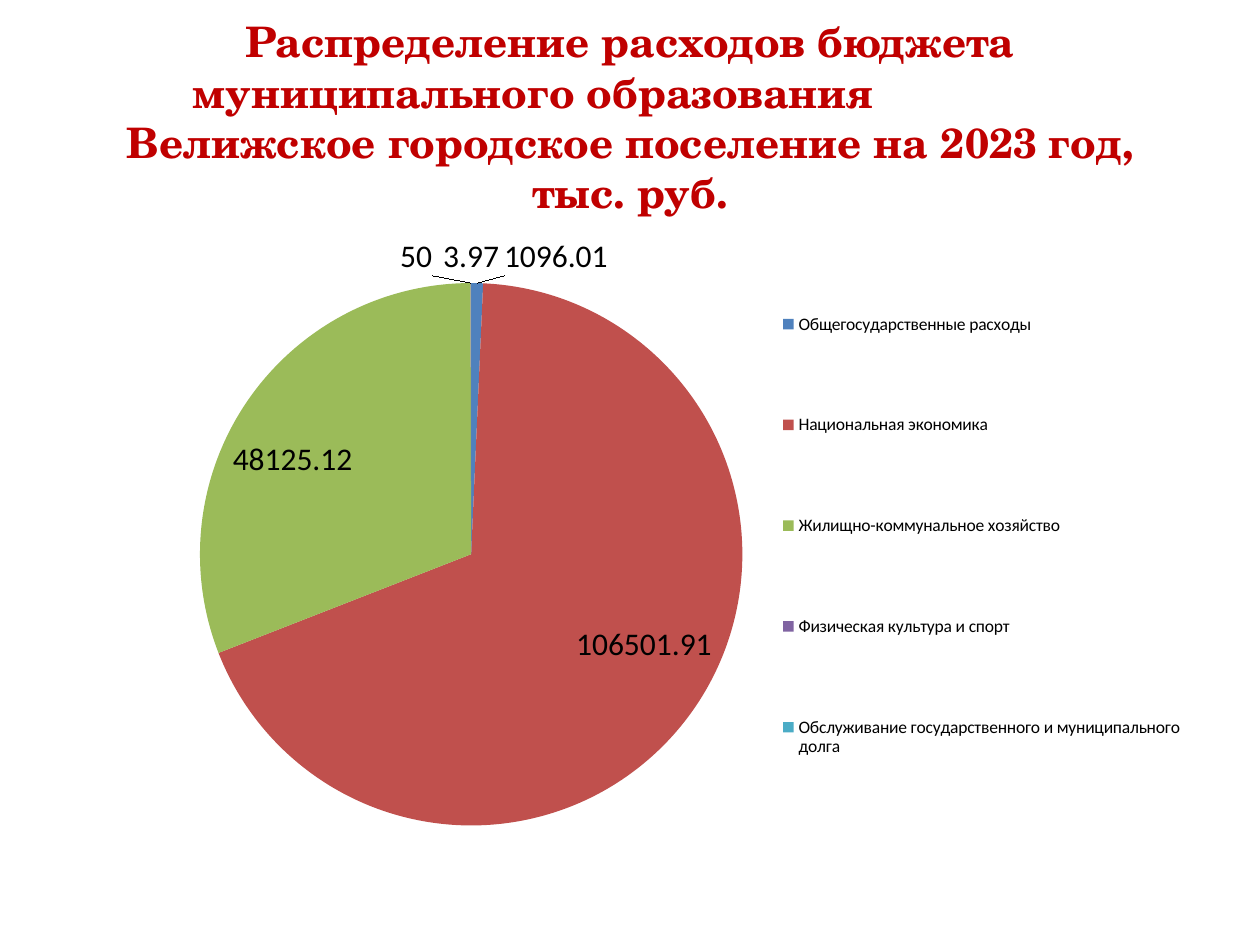
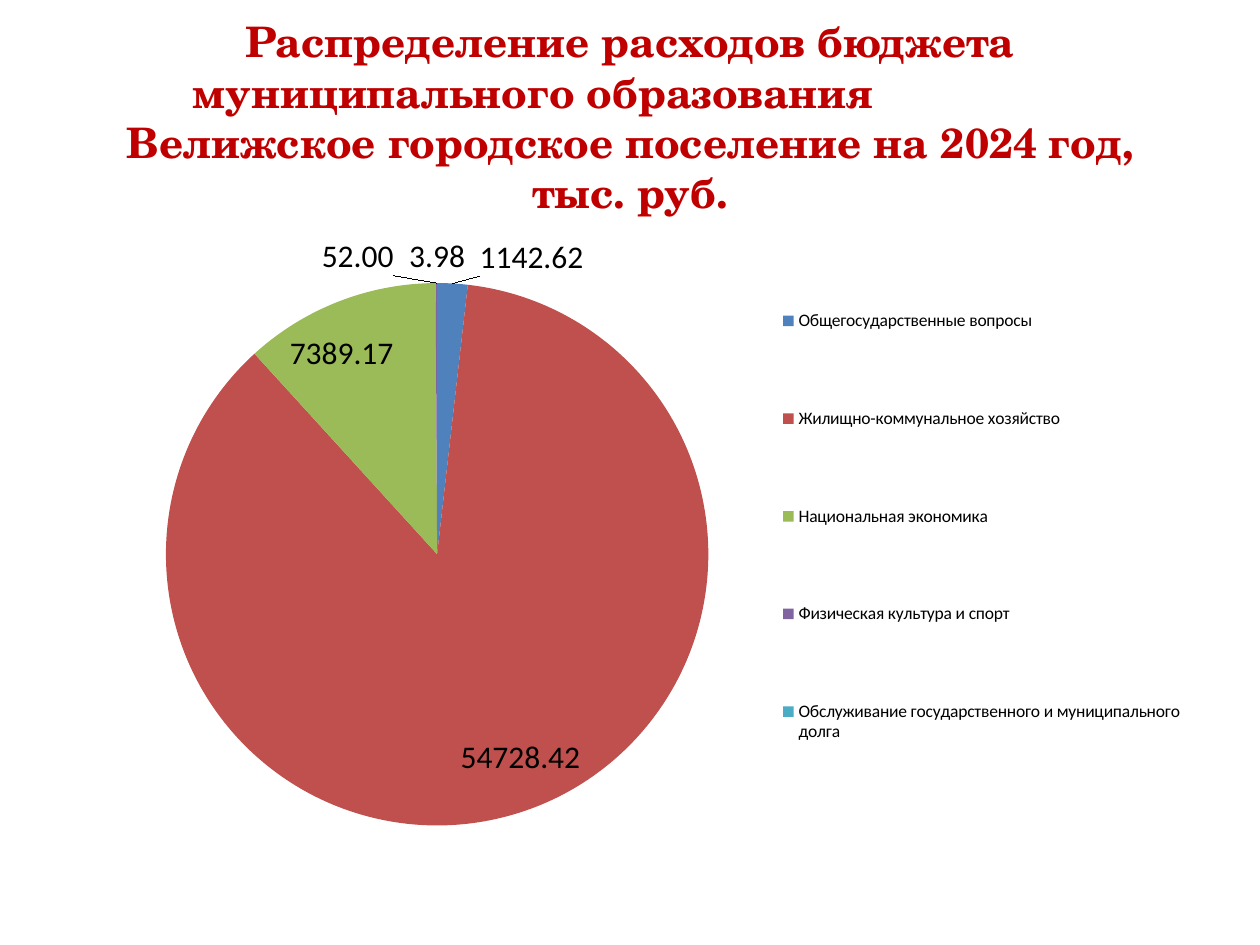
from dataclasses import dataclass

from lxml.etree import SubElement
from pptx import Presentation
from pptx.chart.data import CategoryChartData
from pptx.dml.color import RGBColor
from pptx.enum.chart import XL_CHART_TYPE, XL_LABEL_POSITION, XL_LEGEND_POSITION
from pptx.enum.text import MSO_ANCHOR, MSO_AUTO_SIZE, PP_ALIGN
from pptx.oxml import parse_xml
from pptx.oxml.ns import nsdecls, qn
from pptx.util import Cm, Pt

SPORT = "Физическая культура и спорт"
DEBT = "Обслуживание государственного и муниципального долга"
HOUSING = "Жилищно-коммунальное хозяйство"
ECONOMY = "Национальная экономика"

YEARS = [
    {
        "year": 2023,
        "costs": [
            ("Общегосударственные расходы", 1096.01),
            (ECONOMY, 106501.91),
            (HOUSING, 48125.12),
            (SPORT, 50),
            (DEBT, 3.97),
        ],
        "format": "General",
        "pie": (0.12, 0.1, 0.48, 0.87),
        "legend": (0.63, 0.02, 0.36, 0.97),
    },
    {
        "year": 2024,
        "costs": [
            ("Общегосударственные вопросы", 1142.62),
            (HOUSING, 54728.42),
            (ECONOMY, 7389.17),
            (SPORT, 52),
            (DEBT, 3.98),
        ],
        "format": "0.00",
        "pie": (0.09, 0.1, 0.48, 0.87),
        "legend": (0.63, 0.02, 0.36, 0.94),
    },
]

TITLE = [
    ("Распределение расходов бюджета", 0),
    ("муниципального образования", 3.9),
    ("Велижское городское поселение на {year} год, тыс. руб.", 0),
]


@dataclass(frozen=True)
class Theme:
    red: str = "C00000"
    ink: str = "000000"
    slices: tuple = ("4F81BD", "C0504D", "9BBB59", "8064A2", "4BACC6")
    serif: str = "TeX Gyre Schola"
    sans: str = "Calibri"
    head: int = 24
    label: int = 18
    key: int = 10


THEME = Theme()
SIZE = Cm(25.4), Cm(19.05)
EDGE = Cm(1.27)
WIDTH = SIZE[0] - 2 * EDGE


def apply(item, values):
    for name, value in values.items():
        setattr(item, name, value)


def style(font, face, size, color, bold=False):
    apply(font, {"name": face, "size": Pt(size), "bold": bold})
    font.color.rgb = RGBColor.from_string(color)


def layout(box, inner=False):
    root = parse_xml(f"<c:layout {nsdecls('c')}/>")
    manual = SubElement(root, qn("c:manualLayout"))
    parts = [("layoutTarget", "inner")] if inner else []
    parts += [("xMode", "edge"), ("yMode", "edge"), *zip("xywh", box)]
    for name, value in parts:
        SubElement(manual, qn(f"c:{name}")).set("val", str(value))
    return root


def add_title(slide, year):
    title = slide.shapes.title
    apply(title, {"left": EDGE, "top": Cm(0.76), "width": WIDTH, "height": Cm(3.18)})
    frame = title.text_frame
    apply(frame, {
        "word_wrap": True,
        "auto_size": MSO_AUTO_SIZE.NONE,
        "vertical_anchor": MSO_ANCHOR.MIDDLE,
    })
    frame.text = "\n".join(text for text, _ in TITLE).format(year=year)
    for line, (_, inset) in zip(frame.paragraphs, TITLE):
        apply(line, {"alignment": PP_ALIGN.CENTER, "space_before": Pt(0)})
        line._p.get_or_add_pPr().set("marR", str(Cm(inset)))
        style(line.runs[0].font, THEME.serif, THEME.head, THEME.red, True)


def add_pie(slide, item):
    data = CategoryChartData(number_format=item["format"])
    data.categories = [name for name, _ in item["costs"]]
    data.add_series("Series 1", [cost for _, cost in item["costs"]])
    chart = slide.shapes.add_chart(
        XL_CHART_TYPE.PIE, EDGE, Cm(4.45), WIDTH, Cm(12.57), data
    ).chart
    apply(chart, {"has_title": False, "has_legend": True})
    style(chart.font, THEME.sans, THEME.label, THEME.ink)

    legend = chart.legend
    apply(legend, {"position": XL_LEGEND_POSITION.RIGHT, "include_in_layout": False})
    style(legend.font, THEME.sans, THEME.key, THEME.ink)

    plot = chart.plots[0]
    plot.vary_by_categories = True
    series = plot.series[0]
    for index, color in enumerate(THEME.slices):
        fill = series.points[index].format.fill
        fill.solid()
        fill.fore_color.rgb = RGBColor.from_string(color)
    labels = series.data_labels
    apply(labels, {
        "show_value": True,
        "number_format": item["format"],
        "number_format_is_linked": False,
        "position": XL_LABEL_POSITION.BEST_FIT,
    })
    style(labels.font, THEME.sans, THEME.label, THEME.ink)

    for old in chart.element.xpath("c:chart/c:plotArea/c:layout | c:chart/c:legend/c:layout"):
        old.getparent().remove(old)
    area = chart.element.xpath("c:chart/c:plotArea")[0]
    area.insert(0, layout(item["pie"], inner=True))
    spot = chart.element.xpath("c:chart/c:legend/c:legendPos")[0]
    spot.addnext(layout(item["legend"]))


def main():
    deck = Presentation()
    deck.slide_width, deck.slide_height = SIZE
    for item in YEARS:
        slide = deck.slides.add_slide(deck.slide_layouts[5])
        add_title(slide, item["year"])
        add_pie(slide, item)
    deck.save("out.pptx")


if __name__ == "__main__":
    main()
